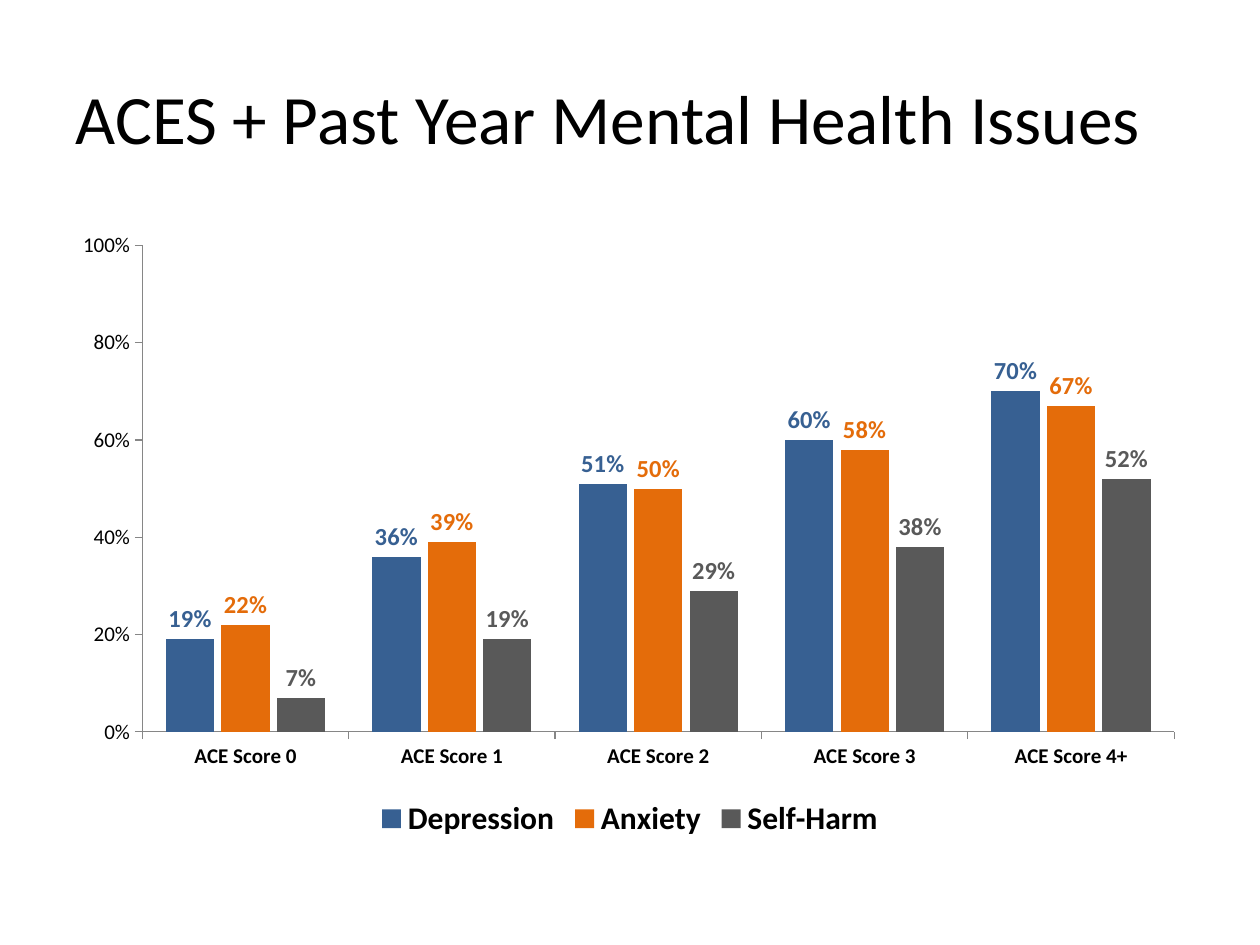
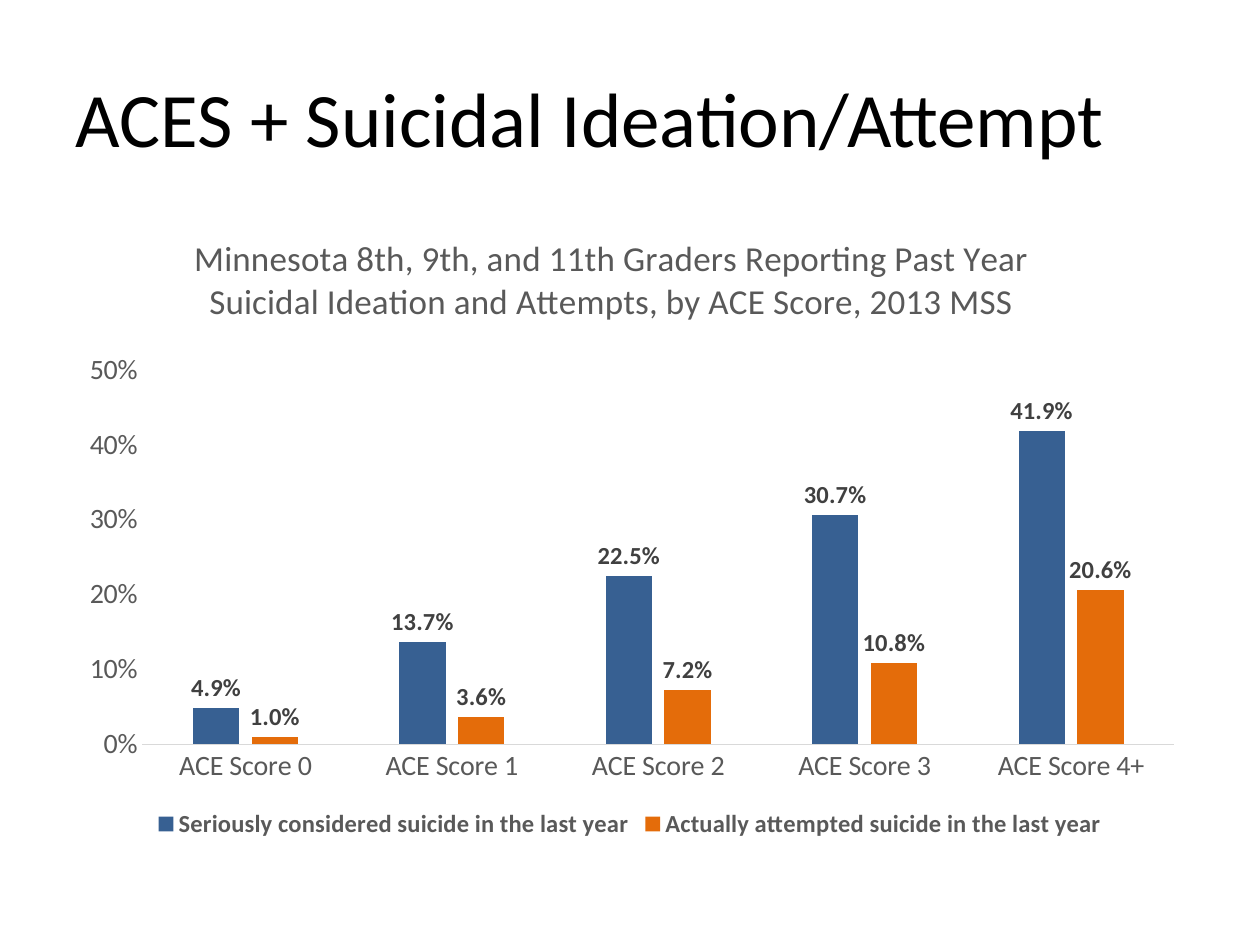
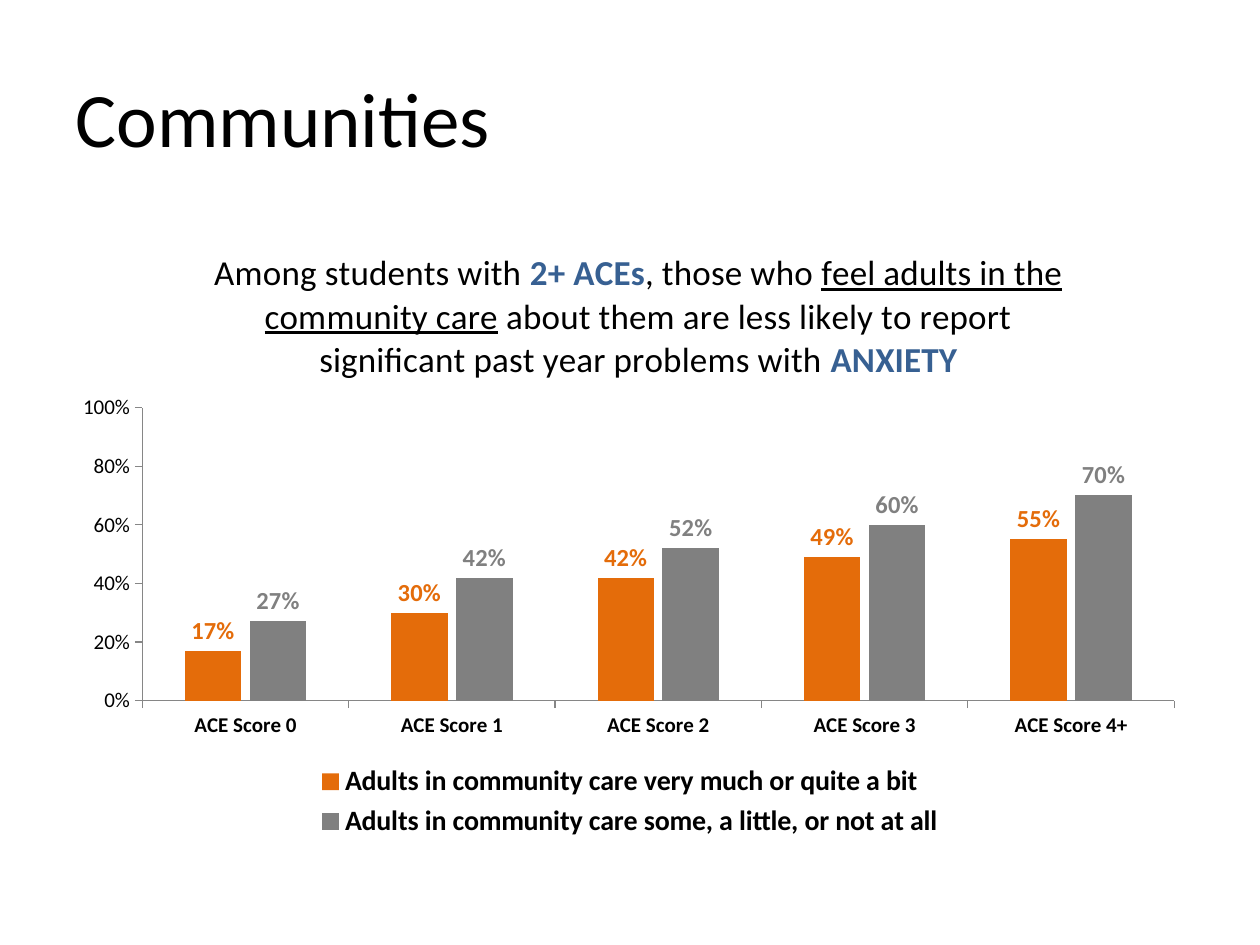
from dataclasses import dataclass
from typing import NamedTuple, Optional

from lxml.etree import SubElement
from pptx import Presentation
from pptx.chart.axis import CategoryAxis, ValueAxis
from pptx.chart.chart import Chart
from pptx.chart.data import CategoryChartData
from pptx.dml.color import RGBColor
from pptx.enum.chart import (XL_CHART_TYPE, XL_LABEL_POSITION,
                             XL_LEGEND_POSITION, XL_TICK_MARK)
from pptx.enum.text import MSO_ANCHOR, PP_ALIGN
from pptx.oxml.ns import qn
from pptx.slide import Slide
from pptx.text.text import Font
from pptx.util import Inches, Pt


@dataclass(frozen=True)
class Theme:
    face: str = "Calibri"
    black: str = "000000"
    white: str = "FFFFFF"
    blue: str = "376092"
    orange: str = "E46C0A"
    dark: str = "595959"
    gray: str = "808080"
    ink: str = "404040"
    axis: str = "868686"
    pale: str = "D9D9D9"
    title: float = 44
    tight: float = 39.6
    head: float = 20
    large: float = 18
    medium: float = 16
    label: float = 14
    small: float = 12
    base: float = 10
    line: float = 0.75


THEME = Theme()
SCORES = [f"ACE Score {score}" for score in ("0", "1", "2", "3", "4+")]
LEFT, WIDTH = Inches(0.5), Inches(9)


class Span(NamedTuple):
    text: str
    color: str = THEME.black
    bold: bool = False
    under: bool = False


class Series(NamedTuple):
    name: str
    values: tuple[float, ...]
    fill: str
    ink: str


class Box(NamedTuple):
    """Place inside a chart, in shares of its width and height."""
    x: float
    y: float
    w: Optional[float] = None
    h: Optional[float] = None


@dataclass(frozen=True)
class Look:
    axis_size: float = THEME.small
    bold_cats: bool = True
    ink: str = THEME.black
    tick: XL_TICK_MARK = XL_TICK_MARK.OUTSIDE
    cat_line: str = THEME.axis
    value_line: Optional[str] = THEME.axis
    top: float = 1
    step: float = 0.2
    labels: str = "0%"


RULED = Look()
PLAIN = Look(THEME.medium, False, THEME.dark, XL_TICK_MARK.NONE,
             THEME.pale, None, 0.5, 0.1, "0.0%")


@dataclass(frozen=True)
class Page:
    title: str
    series: tuple[Series, ...]
    plot: Box
    gap: int
    legend: float
    size: float = THEME.title
    overlap: int = -15
    look: Look = RULED
    head: tuple[Span, ...] = ()
    head_box: Box = Box(0, 0)


PAGES = (
    Page(
        "ACES + Past Year Mental Health Issues",
        (
            Series("Depression", (0.19, 0.36, 0.51, 0.6, 0.7),
                   THEME.blue, THEME.blue),
            Series("Anxiety", (0.22, 0.39, 0.5, 0.58, 0.67),
                   THEME.orange, THEME.orange),
            Series("Self-Harm", (0.07, 0.19, 0.29, 0.38, 0.52),
                   THEME.dark, THEME.dark),
        ),
        Box(0.07, 0.04, 0.91, 0.78), gap=98, legend=THEME.large,
        size=THEME.tight,
    ),
    Page(
        "ACES + Suicidal Ideation/Attempt",
        (
            Series("Seriously considered suicide in the last year",
                   (0.049, 0.137, 0.225, 0.307, 0.419),
                   THEME.blue, THEME.ink),
            Series("Actually attempted suicide in the last year",
                   (0.01, 0.036, 0.072, 0.108, 0.206),
                   THEME.orange, THEME.ink),
        ),
        Box(0.07, 0.24, 0.91, 0.6), gap=219, legend=THEME.label,
        overlap=-27, look=PLAIN,
        head=(Span("Minnesota 8th, 9th, and 11th Graders Reporting Past Year "
                   "Suicidal Ideation and Attempts, by ACE Score, 2013 MSS",
                   THEME.dark),),
        head_box=Box(0.11, 0.01),
    ),
    Page(
        "Communities",
        (
            Series("Adults in community care very much or quite a bit",
                   (0.17, 0.3, 0.42, 0.49, 0.55),
                   THEME.orange, THEME.orange),
            Series("Adults in community care some, a little, or not at all",
                   (0.27, 0.42, 0.52, 0.6, 0.7),
                   THEME.gray, THEME.gray),
        ),
        Box(0.07, 0.3, 0.91, 0.47), gap=150, legend=THEME.medium,
        head=(
            Span("Among students with "),
            Span("2+ ACEs", THEME.blue, bold=True),
            Span(", those who "),
            Span("feel adults in the community care", under=True),
            Span(" about them are less likely to report significant "
                 "past year problems with "),
            Span("ANXIETY", THEME.blue, bold=True),
        ),
        head_box=Box(0.13, 0.04),
    ),
)


def style(font: Font, size: float, color: str = THEME.black,
          bold: bool = False) -> None:
    font.name, font.size, font.bold = THEME.face, Pt(size), bold
    font.color.rgb = RGBColor.from_string(color)


def place(parent, box: Box, index: int) -> None:
    """Give a chart part a manual layout as its child at index."""
    for old in parent.findall(qn("c:layout")):
        parent.remove(old)
    layout = SubElement(parent, qn("c:layout"))
    parent.insert(index, layout)
    manual = SubElement(layout, qn("c:manualLayout"))
    if box.w is not None:
        SubElement(manual, qn("c:layoutTarget")).set("val", "inner")
    for mode in ("xMode", "yMode"):
        SubElement(manual, qn(f"c:{mode}")).set("val", "edge")
    for key, share in box._asdict().items():
        if share is not None:
            SubElement(manual, qn(f"c:{key}")).set("val", str(share))


def add_head(chart: Chart, page: Page) -> None:
    chart.has_title = bool(page.head)
    if not page.head:
        return
    para = chart.chart_title.text_frame.paragraphs[0]
    para.alignment = PP_ALIGN.CENTER
    style(para.font, THEME.head)
    for span in page.head:
        run = para.add_run()
        run.text = span.text
        style(run.font, THEME.head, span.color, span.bold)
        run.font.underline = span.under
    place(chart.chart_title.element, page.head_box, 1)


def style_axis(axis: CategoryAxis | ValueAxis, look: Look,
               line: Optional[str], bold: bool) -> None:
    axis.major_tick_mark = look.tick
    axis.minor_tick_mark = XL_TICK_MARK.NONE
    style(axis.tick_labels.font, look.axis_size, look.ink, bold)
    if line is None:
        axis.format.line.fill.background()
    else:
        draw_line(axis.format.line, line)


def draw_line(line, color: str) -> None:
    line.width = Pt(THEME.line)
    line.color.rgb = RGBColor.from_string(color)


def style_axes(chart: Chart, look: Look) -> None:
    style_axis(chart.category_axis, look, look.cat_line, look.bold_cats)
    chart.category_axis.has_major_gridlines = False
    scale = chart.value_axis
    style_axis(scale, look, look.value_line, False)
    scale.minimum_scale, scale.maximum_scale = 0, look.top
    scale.major_unit = look.step
    scale.tick_labels.number_format = "0%"
    scale.tick_labels.number_format_is_linked = False
    draw_line(scale.major_gridlines.format.line, THEME.white)


def style_bars(chart: Chart, page: Page) -> None:
    plot = chart.plots[0]
    plot.gap_width, plot.overlap = page.gap, page.overlap
    plot.vary_by_categories = False
    for bars, series in zip(plot.series, page.series):
        bars.invert_if_negative = False
        bars.format.fill.solid()
        bars.format.fill.fore_color.rgb = RGBColor.from_string(series.fill)
        labels = bars.data_labels
        labels.show_value = True
        labels.position = XL_LABEL_POSITION.OUTSIDE_END
        labels.number_format = page.look.labels
        labels.number_format_is_linked = False
        style(labels.font, THEME.label, series.ink, True)


def add_bars(slide: Slide, page: Page) -> None:
    data = CategoryChartData(number_format=page.look.labels)
    data.categories = SCORES
    for series in page.series:
        data.add_series(series.name, series.values)
    chart = slide.shapes.add_chart(
        XL_CHART_TYPE.COLUMN_CLUSTERED, LEFT, Inches(1.75),
        WIDTH, Inches(4.95), data).chart
    style(chart.font, THEME.base)
    add_head(chart, page)
    style_axes(chart, page.look)
    style_bars(chart, page)
    chart.has_legend = True
    chart.legend.position = XL_LEGEND_POSITION.BOTTOM
    chart.legend.include_in_layout = False
    style(chart.legend.font, page.legend, page.look.ink, True)
    place(chart.element.find(f".//{qn('c:plotArea')}"), page.plot, 0)


def add_title(slide: Slide, page: Page) -> None:
    title = slide.shapes.title
    title.left, title.top = LEFT, Inches(0.3)
    title.width, title.height = WIDTH, Inches(1.25)
    title.text_frame.vertical_anchor = MSO_ANCHOR.MIDDLE
    para = title.text_frame.paragraphs[0]
    para.text = page.title
    para.alignment = PP_ALIGN.LEFT
    style(para.font, page.size)


def main() -> None:
    deck = Presentation()
    deck.slide_width, deck.slide_height = Inches(10), Inches(7.5)
    for page in PAGES:
        slide = deck.slides.add_slide(deck.slide_layouts[5])
        add_title(slide, page)
        add_bars(slide, page)
    deck.save("out.pptx")


if __name__ == "__main__":
    main()
